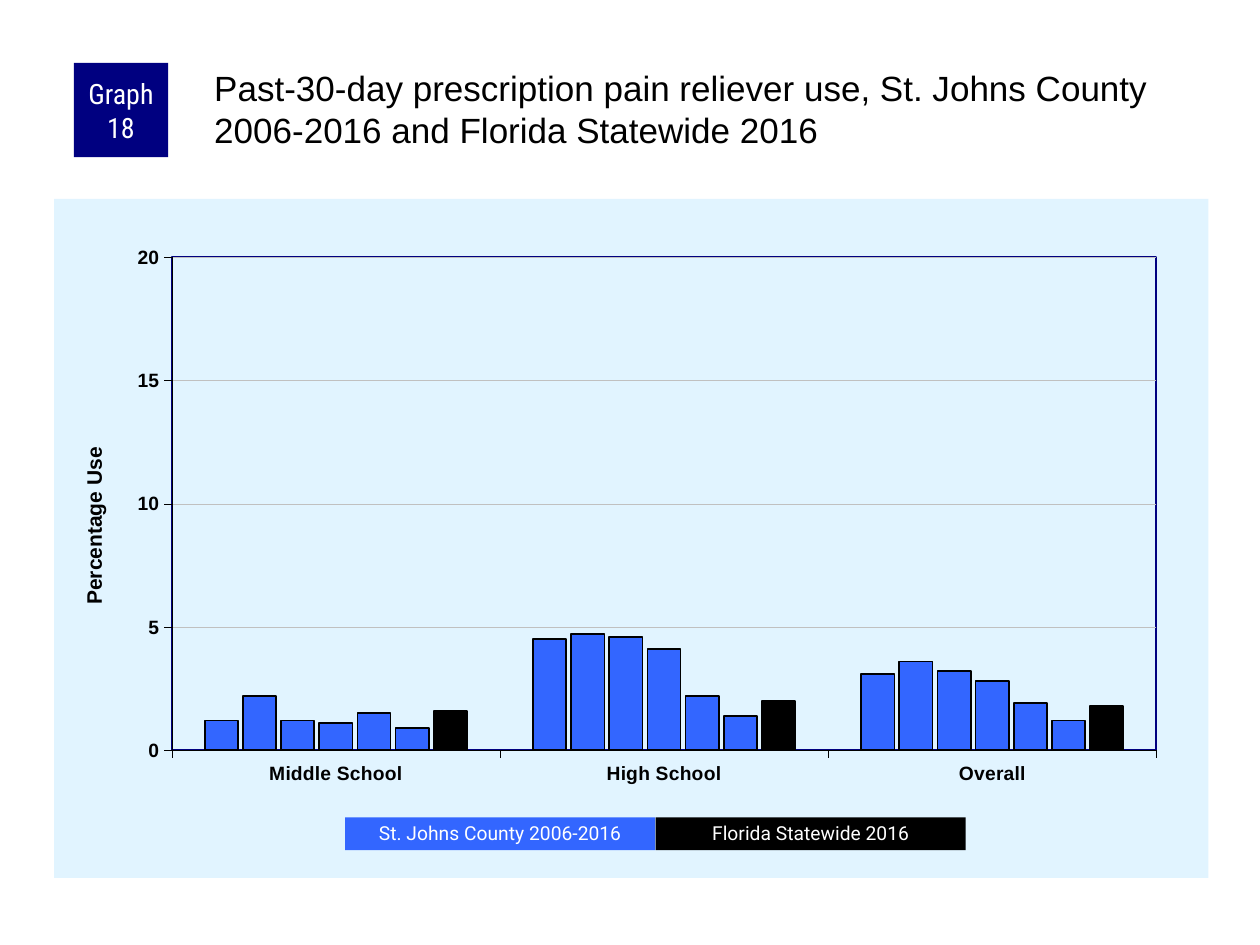
import dataclasses

import pptx
import pptx.chart.data
import pptx.dml.color
import pptx.enum.chart
import pptx.enum.shapes
import pptx.enum.text
import pptx.oxml
import pptx.oxml.ns
import pptx.util

Cm = pptx.util.Cm
Pt = pptx.util.Pt
RGB = pptx.dml.color.RGBColor.from_string
NS = pptx.oxml.ns.nsdecls("c", "a")


@dataclasses.dataclass(frozen=True)
class Theme:
    black: str = "000000"
    white: str = "FFFFFF"
    navy: str = "000080"
    county: str = "3366FF"
    panel: str = "E1F4FF"
    grid: str = "C0C0C0"
    heading_size: float = 20
    badge_size: float = 16
    axis_title_size: float = 12
    label_size: float = 11
    chart_size: float = 8


theme = Theme()


def write_text(frame, text, *, size, color, font="Arial", bold=False,
               align=None, anchor=None, margins=None, spacing=None):
    """Fill a text frame; margins are left, top, right, bottom in cm."""
    frame.word_wrap = True
    if anchor is not None:
        frame.vertical_anchor = anchor
    if margins:
        (frame.margin_left, frame.margin_top,
         frame.margin_right, frame.margin_bottom) = map(Cm, margins)
    paragraph = frame.paragraphs[0]
    paragraph.alignment = align
    paragraph.line_spacing = spacing
    run = paragraph.add_run()
    run.text = text
    run.font.name = font
    run.font.size = Pt(size)
    run.font.bold = bold
    run.font.color.rgb = RGB(color)


def manual_layout(target="", **fractions):
    """Make a chart layout element from fractions of the chart's size."""
    modes = "".join(f'<c:{axis}Mode val="edge"/>' for axis in "xy")
    values = "".join(f'<c:{key} val="{value}"/>' for key, value in fractions.items())
    return pptx.oxml.parse_xml(
        f"<c:layout {NS}><c:manualLayout>{target}{modes}{values}"
        "</c:manualLayout></c:layout>")


deck = pptx.Presentation()
deck.slide_width, deck.slide_height = Cm(25.4), Cm(19.05)
slide = deck.slides.add_slide(deck.slide_layouts[6])
slide.background.fill.solid()
slide.background.fill.fore_color.rgb = RGB(theme.white)

# Chart: six county surveys followed by the statewide one
use_by_school = {
    "Middle School": (1.2, 2.2, 1.2, 1.1, 1.5, 0.9, 1.6),
    "High School": (4.5, 4.7, 4.6, 4.1, 2.2, 1.4, 2.0),
    "Overall": (3.1, 3.6, 3.2, 2.8, 1.9, 1.2, 1.8),
}
use_data = pptx.chart.data.CategoryChartData()
use_data.categories = list(use_by_school)
for number, values in enumerate(zip(*use_by_school.values()), start=1):
    use_data.add_series(f"Series {number}", values)

chart = slide.shapes.add_chart(
    pptx.enum.chart.XL_CHART_TYPE.COLUMN_CLUSTERED,
    Cm(1.09), Cm(4.01), Cm(23.27), Cm(13.69), use_data).chart
chart.has_title = False
chart.has_legend = False
chart.font.name = "Arial"
chart.font.size = Pt(theme.chart_size)
chart.font.color.rgb = RGB(theme.black)

bars = chart.plots[0]
bars.gap_width = 200
bars.overlap = -15
bars.vary_by_categories = False
for survey in bars.series:
    is_statewide = survey.name == "Series 7"
    survey.format.fill.solid()
    survey.format.fill.fore_color.rgb = RGB(theme.black if is_statewide else theme.county)
    survey.format.line.color.rgb = RGB(theme.black)
    survey.format.line.width = Pt(1)

school_axis, use_axis = chart.category_axis, chart.value_axis
for axis in (school_axis, use_axis):
    axis.major_tick_mark = pptx.enum.chart.XL_TICK_MARK.OUTSIDE
    axis.minor_tick_mark = pptx.enum.chart.XL_TICK_MARK.NONE
    axis.format.line.color.rgb = RGB(theme.black)
    axis.format.line.width = Pt(0.25)
    labels = axis.tick_labels.font
    labels.name = "Arial"
    labels.size = Pt(theme.label_size)
    labels.bold = True
    labels.color.rgb = RGB(theme.black)

use_axis.minimum_scale, use_axis.maximum_scale, use_axis.major_unit = 0, 20, 5
use_axis.tick_labels.number_format = "0"
use_axis.tick_labels.number_format_is_linked = False
use_axis.has_major_gridlines = True
use_axis.major_gridlines.format.line.color.rgb = RGB(theme.grid)
use_axis.major_gridlines.format.line.width = Pt(0.25)
write_text(use_axis.axis_title.text_frame, "Percentage Use",
           size=theme.axis_title_size, color=theme.black, bold=True)

# Chart panel, plot frame and manual positions
chart_space = chart.element
for old_layout in chart_space.xpath(".//c:plotArea/c:layout | .//c:valAx/c:title/c:layout"):
    old_layout.getparent().remove(old_layout)
plot_area = chart_space.xpath("c:chart/c:plotArea")[0]
plot_area.insert(0, manual_layout('<c:layoutTarget val="inner"/>',
                                  x=0.102, y=0.086, w=0.853, h=0.726))
plot_area.append(pptx.oxml.parse_xml(
    f'<c:spPr {NS}><a:noFill/><a:ln w="{Pt(1)}"><a:solidFill>'
    f'<a:srgbClr val="{theme.navy}"/></a:solidFill></a:ln></c:spPr>'))
chart_space.xpath("c:chart")[0].addnext(pptx.oxml.parse_xml(
    f'<c:spPr {NS}><a:solidFill><a:srgbClr val="{theme.panel}"/></a:solidFill>'
    "<a:ln><a:noFill/></a:ln></c:spPr>"))
axis_title_text = chart_space.xpath(".//c:valAx/c:title/c:tx")[0]
axis_title_text.addnext(manual_layout(x=0.02, y=0.36))
axis_title_body = axis_title_text.xpath("c:rich/a:bodyPr")[0]
axis_title_body.set("rot", "-5400000")
axis_title_body.set("vert", "horz")

# Graph badge and the two legend keys
key_format = dict(font="Roboto", size=theme.label_size, spacing=0.9)
badge_format = dict(font="Roboto Condensed", size=theme.badge_size,
                    margins=(0.13, 0, 0.13, 0))
for text, box, fill, text_format in (
    ("Graph 18", (1.49, 1.27, 1.9, 1.9), theme.navy, badge_format),
    ("St. Johns County 2006-2016", (6.96, 16.48, 6.25, 0.66), theme.county, key_format),
    ("Florida Statewide 2016", (13.22, 16.48, 6.25, 0.66), theme.black, key_format),
):
    block = slide.shapes.add_shape(
        pptx.enum.shapes.MSO_SHAPE.RECTANGLE, *map(Cm, box))
    block.shadow.inherit = False
    block.fill.solid()
    block.fill.fore_color.rgb = RGB(fill)
    block.line.fill.background()
    write_text(block.text_frame, text, color=theme.white,
               align=pptx.enum.text.PP_ALIGN.CENTER,
               anchor=pptx.enum.text.MSO_ANCHOR.MIDDLE, **text_format)

heading = slide.shapes.add_textbox(Cm(4.24), Cm(1.27), Cm(20.12), Cm(2.11))
write_text(heading.text_frame,
           "Past-30-day prescription pain reliever use, "
           "St. Johns County 2006-2016 and Florida Statewide 2016",
           size=theme.heading_size, color=theme.black, margins=(0.08, 0.08, 0, 0))

deck.save("out.pptx")
